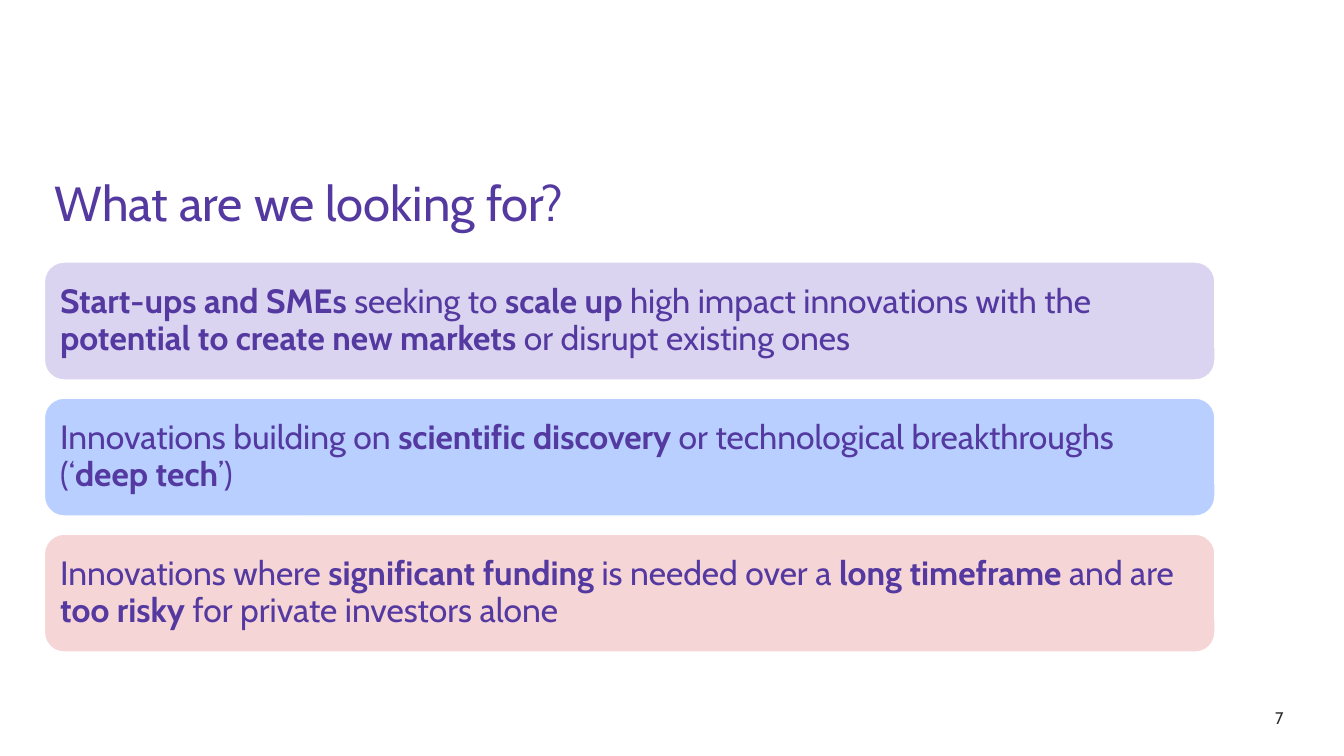
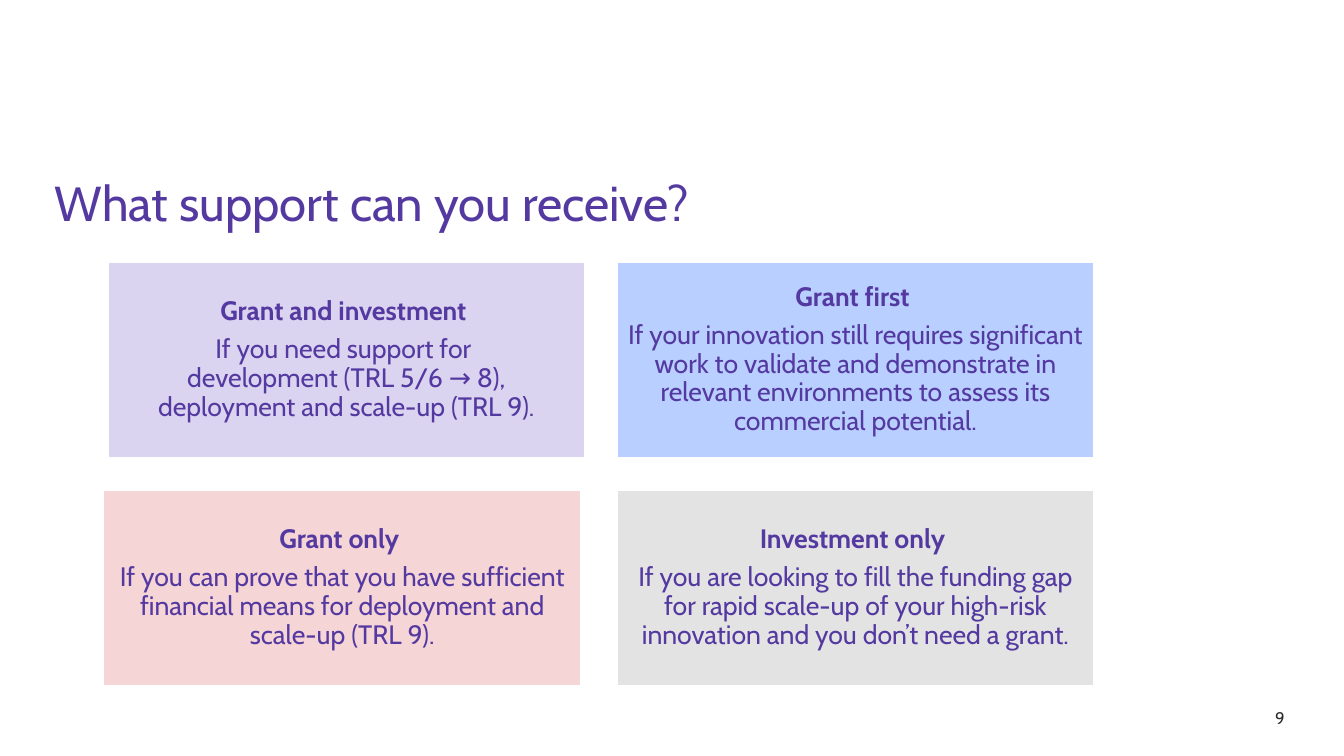
from pptx import Presentation
from pptx.dml.color import RGBColor
from pptx.enum.shapes import MSO_SHAPE
from pptx.enum.text import MSO_ANCHOR, MSO_AUTO_SIZE, PP_ALIGN
from pptx.util import Inches, Pt

FONT = "Cabin"
PURPLE, DARK, WHITE = "5439A1", "2C2C2C", "FFFFFF"
LILAC, BLUE, PINK, GREY = "DBD4F0", "B8CFFF", "F5D5D5", "E3E3E3"

# Each statement is a list of (text, bold) runs
STATEMENTS = [
    (LILAC, [("Start-ups and SMEs ", True), ("seeking to ", False),
             ("scale up ", True), ("high impact innovations with the ", False),
             ("potential to create new markets ", True),
             ("or disrupt existing ones", False)]),
    (BLUE, [("Innovations building on ", False), ("scientific discovery ", True),
            ("or technological breakthroughs (‘", False),
            ("deep tech", True), ("’)", False)]),
    (PINK, [("Innovations where ", False), ("significant funding ", True),
            ("is needed over a ", False), ("long timeframe ", True),
            ("and are ", False), ("too risky ", True),
            ("for private investors alone", False)]),
]

# Each option is a fill, a left edge, a heading and its body paragraphs
OPTIONS = [
    (LILAC, 1.07, "Grant and investment ",
     ["If you need support for ",
      "development (TRL 5/6 → 8), deployment and scale-up (TRL 9)."]),
    (BLUE, 6.12, "Grant first ",
     ["If your innovation still requires significant work to validate and "
      "demonstrate in relevant environments to assess its commercial potential."]),
    (PINK, 1.03, "Grant only ",
     ["If you can prove that you have sufficient financial means for "
      "deployment and scale-up (TRL 9)."]),
    (GREY, 6.12, "Investment only ",
     ["If you are looking to fill the funding gap for rapid scale-up of your "
      "high-risk innovation and you don’t need a grant."]),
]


def color(value):
    return RGBColor.from_string(value)


def write_text(shape, paragraphs, size=24, text_color=PURPLE, align=PP_ALIGN.LEFT,
               anchor=MSO_ANCHOR.TOP, line_spacing=0.9, heading_gap=0,
               inset=(0.1, 0.05), wrap=True):
    """Fill a shape with paragraphs, each a list of (text, bold) runs."""
    frame = shape.text_frame
    frame.word_wrap = wrap
    frame.auto_size = MSO_AUTO_SIZE.NONE
    frame.vertical_anchor = anchor
    frame.margin_left = frame.margin_right = Inches(inset[0])
    frame.margin_top = frame.margin_bottom = Inches(inset[1])
    for index, runs in enumerate(paragraphs):
        paragraph = frame.add_paragraph() if index else frame.paragraphs[0]
        paragraph.alignment = align
        paragraph.line_spacing = line_spacing
        paragraph.space_before = Pt(0)
        paragraph.space_after = Pt(0 if index else heading_gap)
        for text, bold in runs:
            run = paragraph.add_run()
            run.text = text
            run.font.name = FONT
            run.font.size = Pt(size)
            run.font.bold = bold
            run.font.color.rgb = color(text_color)


def add_panel(slide, preset, box, fill):
    panel = slide.shapes.add_shape(preset, *map(Inches, box))
    panel.shadow.inherit = False
    panel.fill.solid()
    panel.fill.fore_color.rgb = color(fill)
    panel.line.color.rgb = color(WHITE)
    panel.line.width = Pt(1)
    return panel


def add_titled_slide(presentation, title, number):
    slide = presentation.slides.add_slide(presentation.slide_layouts[5])
    # Title
    heading = slide.shapes.title
    heading.left, heading.top = Inches(0.44), Inches(1.73)
    heading.width, heading.height = Inches(12.08), Inches(1.45)
    write_text(heading, [[(title, False)]], size=35)
    # Page number
    page = slide.shapes.add_textbox(*map(Inches, (12.55, 6.97, 0.7, 0.4)))
    write_text(page, [[(number, False)]], size=12, text_color=DARK, line_spacing=1)
    return slide


def add_statements(slide, left, top, width, height, gap=0.18):
    """Stack rounded bars in equal rows."""
    row_height = (height - gap * (len(STATEMENTS) - 1)) / len(STATEMENTS)
    for row, (fill, runs) in enumerate(STATEMENTS):
        box = (left, top + row * (row_height + gap), width, row_height)
        bar = add_panel(slide, MSO_SHAPE.ROUNDED_RECTANGLE, box, fill)
        write_text(bar, [runs], anchor=MSO_ANCHOR.MIDDLE, inset=(0.1, 0.1))


def add_options(slide, top, card_width, card_height, gap=0.32):
    """Lay out cards in two columns."""
    for index, (fill, left, heading, body) in enumerate(OPTIONS):
        box = (left, top + index // 2 * (card_height + gap), card_width, card_height)
        card = add_panel(slide, MSO_SHAPE.RECTANGLE, box, fill)
        paragraphs = [[(heading, True)]] + [[(text, False)] for text in body]
        write_text(card, paragraphs, size=19, align=PP_ALIGN.CENTER,
                   anchor=MSO_ANCHOR.MIDDLE, heading_gap=6.65, inset=(0.08, 0.08))


def main():
    presentation = Presentation()
    presentation.slide_width = Inches(13.33)
    presentation.slide_height = Inches(7.5)

    slide = add_titled_slide(presentation, "What are we looking for?", "7")
    add_statements(slide, 0.44, 2.6, 11.61, 3.87)

    slide = add_titled_slide(presentation, "What support can you receive?", "9")
    add_options(slide, 2.6, 4.73, 1.94)

    presentation.save("out.pptx")


if __name__ == "__main__":
    main()
